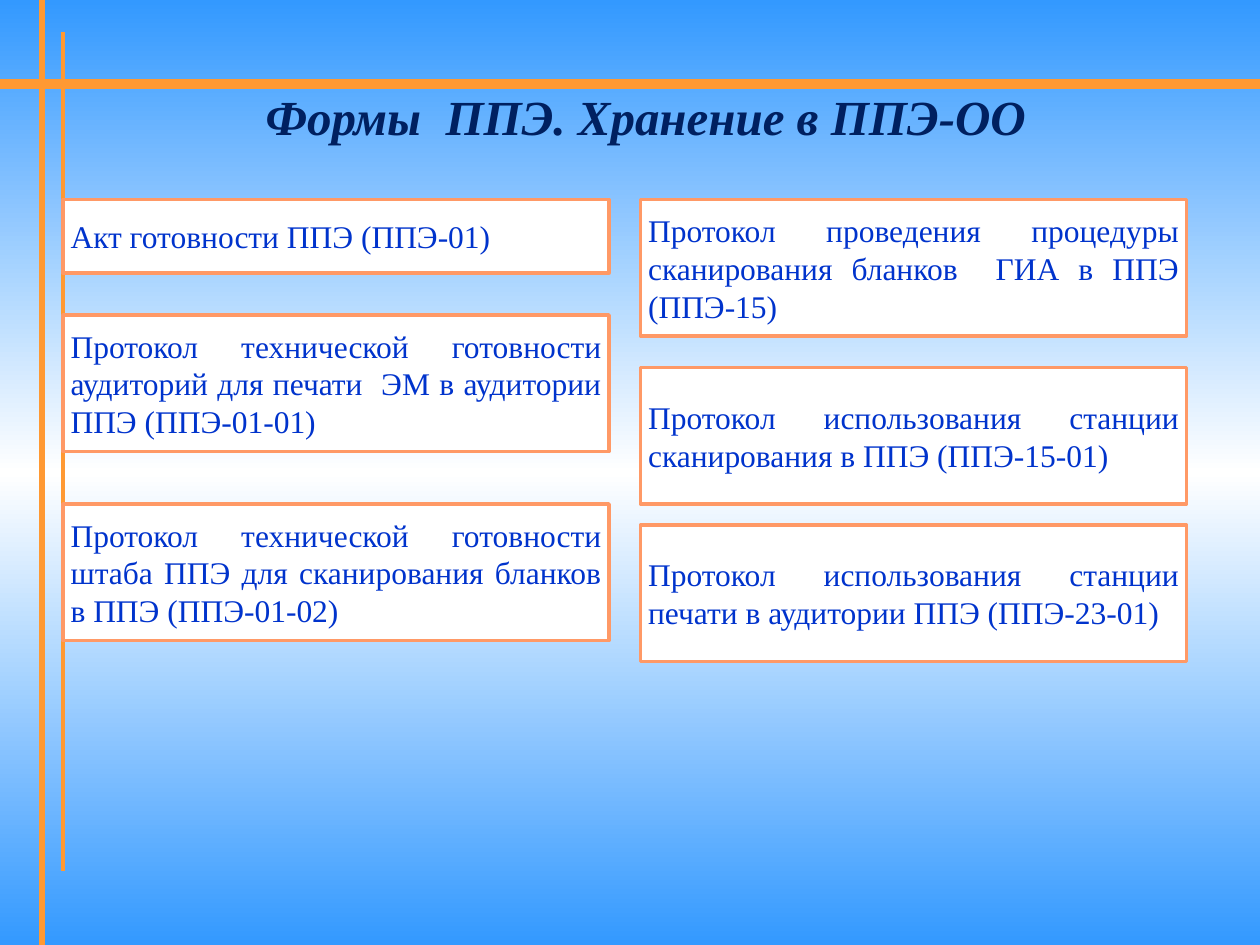
from copy import deepcopy
from dataclasses import dataclass

from pptx import Presentation
from pptx import util as u
from pptx.dml.color import RGBColor
from pptx.enum import shapes, text
from pptx.oxml import ns, xmlchemy


@dataclass(frozen=True)
class Theme:
    font: str = "Times New Roman"
    sky: str = "3399FF"
    white: str = "FFFFFF"
    rule: str = "FF9933"
    edge: str = "FF9966"
    head: str = "002060"
    body: str = "0033CC"
    big: int = 28
    small: int = 18


T = Theme()
COLS, ROWS = 120, 90  # the slide as a grid of twelfths of an inch
LEFT, RIGHT, WIDE = 6, 61, 52  # card columns and card width


def grid(*vals):
    return [u.Inches(v / 12) for v in vals]


def rgb(code):
    return RGBColor.from_string(code)


def paint(slide):
    """Vertical three-stop gradient behind everything."""
    fill = slide.background.fill
    fill.gradient()
    fill.gradient_angle = 270
    stops = slide.element.find(".//" + ns.qn("a:gsLst"))
    stops.append(deepcopy(stops[-1]))
    looks = ((0, T.sky), (0.5, T.white), (1, T.sky))
    for stop, (pos, code) in zip(fill.gradient_stops, looks):
        stop.position = pos
        stop.color.rgb = rgb(code)


def rule(slide, ends, width):
    line = slide.shapes.add_connector(
        shapes.MSO_CONNECTOR.STRAIGHT, *grid(*ends))
    line.line.color.rgb = rgb(T.rule)
    line.line.width = u.Pt(width)
    line._element.spPr.append(xmlchemy.OxmlElement("a:effectLst"))


def write(shape, words, *, size, color, align, bold=False, italic=False):
    frame = shape.text_frame
    frame.word_wrap = True
    frame.vertical_anchor = text.MSO_ANCHOR.MIDDLE
    para = frame.paragraphs[0]
    para.alignment = align
    run = para.add_run()
    run.text = words
    font = run.font
    font.name, font.size = T.font, u.Pt(size)
    font.bold, font.italic = bold, italic
    font.color.rgb = rgb(color)


def title(slide, words, place):
    box = slide.shapes.add_textbox(*grid(*place))
    write(box, words, size=T.big, color=T.head, bold=True, italic=True,
          align=text.PP_ALIGN.CENTER)


def card(slide, words, left, top, high):
    box = slide.shapes.add_shape(
        shapes.MSO_SHAPE.RECTANGLE, *grid(left, top, WIDE, high))
    box.shadow.inherit = False
    box.fill.solid()
    box.fill.fore_color.rgb = rgb(T.white)
    box.line.color.rgb = rgb(T.edge)
    box.line.width = u.Pt(2)
    frame = box.text_frame
    frame.margin_left = frame.margin_right = u.Inches(0.06)
    frame.margin_top = frame.margin_bottom = u.Inches(0.03)
    write(box, words, size=T.small, color=T.body,
          align=text.PP_ALIGN.JUSTIFY)


def main():
    deck = Presentation()
    deck.slide_width, deck.slide_height = grid(COLS, ROWS)
    slide = deck.slides.add_slide(deck.slide_layouts[6])

    # Backdrop and crossing rules
    paint(slide)
    rule(slide, (0, 8, COLS, 8), 6)
    rule(slide, (4, 0, 4, ROWS), 3)
    rule(slide, (6, 3, 6, 83), 2.25)

    title(slide, "Формы  ППЭ. Хранение в ППЭ-ОО", (7, 8, 109, 6))

    # Cards: column, top row, height, words
    cards = (
        (LEFT, 19, 7, "Акт готовности ППЭ (ППЭ-01)"),
        (LEFT, 30, 13, "Протокол технической готовности аудиторий "
                       "для печати  ЭМ в аудитории ППЭ (ППЭ-01-01)"),
        (LEFT, 48, 13, "Протокол технической готовности штаба ППЭ "
                       "для сканирования бланков в ППЭ (ППЭ-01-02)"),
        (RIGHT, 19, 13, "Протокол проведения процедуры сканирования "
                        "бланков  ГИА в ППЭ (ППЭ-15)"),
        (RIGHT, 35, 13, "Протокол использования станции "
                        "сканирования в ППЭ (ППЭ-15-01)"),
        (RIGHT, 50, 13, "Протокол использования станции "
                        "печати в аудитории ППЭ (ППЭ-23-01)"),
    )
    for left, top, high, words in cards:
        card(slide, words, left, top, high)

    deck.save("out.pptx")


if __name__ == "__main__":
    main()
